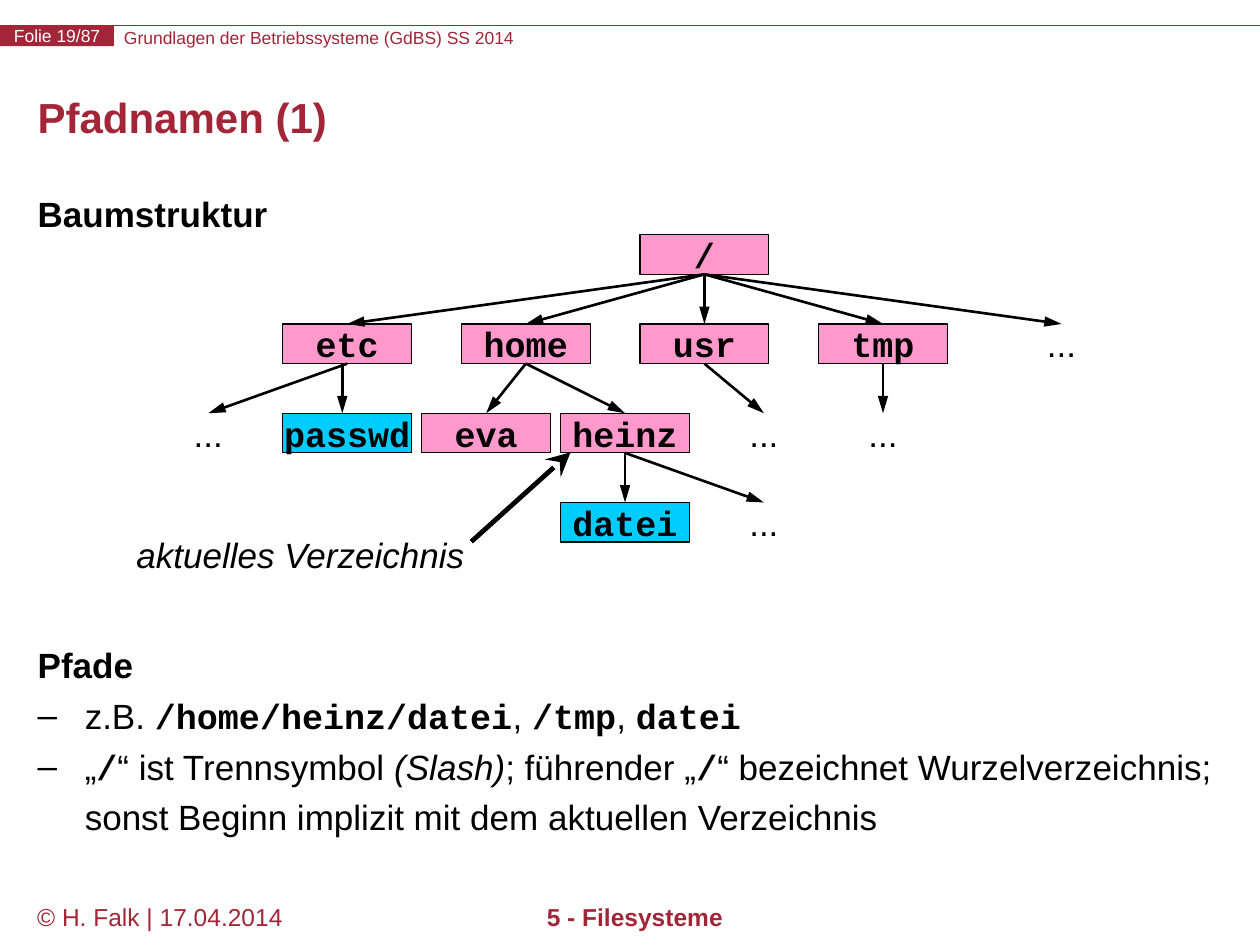
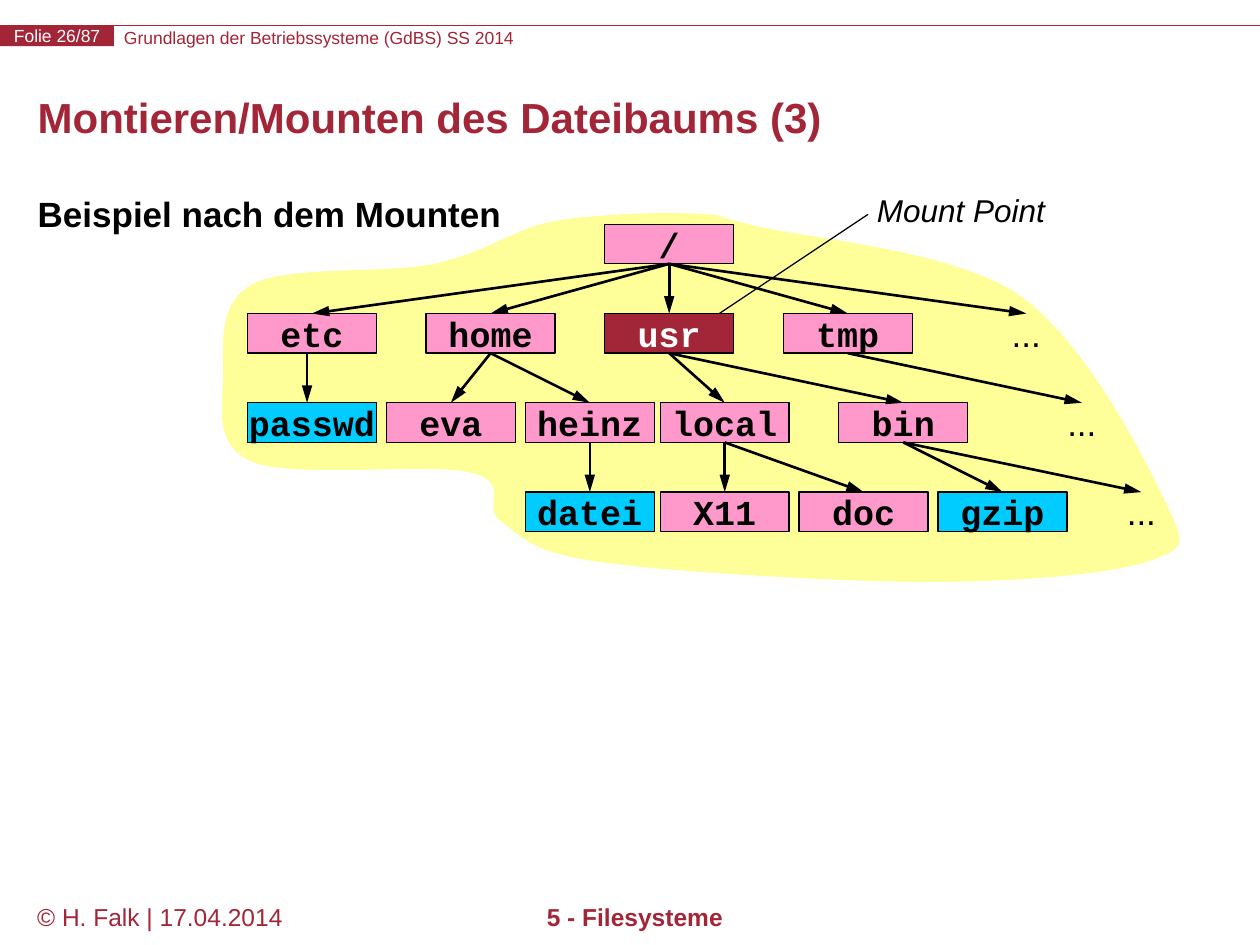
from lxml import etree
from pptx import Presentation
from pptx import util as u
from pptx.dml.color import RGBColor
from pptx.enum import shapes, text
from pptx.oxml.ns import qn

COLORS = {"brand": "A32638", "directory": "FF99CC", "file": "00CCFF",
          "mounted": "A32638", "area": "FFFF99", "black": "000000", "white": "FFFFFF"}
SANS, MONO = "Arial", "Courier New"
BOX_WIDTH, BOX_HEIGHT, LEVEL_STEP = 2.6, 0.8, 1.8
PASSWD_EDGE_SHIFT = 0.1

COMMON_NODES = [
    ("/", 0, 0, "directory", None),
    ("etc", 1, -7.2, "directory", "/"),
    ("home", 1, -3.6, "directory", "/"),
    ("usr", 1, 0, "directory", "/"),
    ("tmp", 1, 3.6, "directory", "/"),
    ("...", 1, 7.2, None, "/"),
    ("passwd", 2, -7.2, "file", "etc"),
    ("eva", 2, -4.4, "directory", "home"),
    ("heinz", 2, -1.6, "directory", "home"),
    ("datei", 3, -1.6, "file", "heinz"),
]
PATH_NODES = [
    ("...", 2, -10, None, "etc"),
    ("...", 2, 1.2, None, "usr"),
    ("...", 2, 3.6, None, "tmp"),
    ("...", 3, 1.2, None, "heinz"),
]
MOUNT_NODES = [
    ("...", 2, 8.32, None, "tmp"),
    ("local", 2, 1.12, "directory", "usr"),
    ("bin", 2, 4.72, "directory", "usr"),
    ("X11", 3, 1.12, "directory", "local"),
    ("doc", 3, 3.92, "directory", "local"),
    ("gzip", 3, 6.72, "file", "bin"),
    ("...", 3, 9.52, None, "bin"),
]
AREA_START = (12.5, 4.32)
AREA_CURVES = [
    ((13.06, 4.29), (13.87, 4.29), (14.3, 4.32)),
    ((14.73, 4.37), (14.07, 4.27), (15.09, 4.52)),
    ((16.13, 4.8), (19.1, 5), (20.5, 5.92)),
    ((21.89, 6.86), (23.06, 9.22), (23.5, 10.13)),
    ((23.93, 11.02), (23.9, 11.05), (23.11, 11.33)),
    ((22.3, 11.58), (20.55, 11.73), (18.69, 11.73)),
    ((16.87, 11.73), (13.54, 11.53), (12.09, 11.33)),
    ((10.67, 11.13), (10.54, 10.82), (10.11, 10.52)),
    ((9.68, 10.24), (10.34, 9.73), (9.5, 9.53)),
    ((8.66, 9.32), (5.94, 9.65), (5.11, 9.32)),
    ((4.27, 8.99), (4.5, 8.13), (4.5, 7.52)),
    ((4.5, 6.93), (4.39, 6.1), (5.11, 5.72)),
    ((5.79, 5.36), (7.75, 5.51), (8.71, 5.33)),
    ((9.68, 5.13), (10.26, 4.7), (10.9, 4.52)),
    ((11.53, 4.37), (11.94, 4.37), AREA_START),
]
PATH_BULLETS = [
    [("z.B. ", ""), ("/home/heinz/datei", "mono"), (", ", ""), ("/tmp", "mono"),
     (", ", ""), ("datei", "mono")],
    [("„", ""), ("/", "mono"), ("“ ist Trennsymbol ", ""), ("(Slash)", "italic"),
     ("; führender „", ""), ("/", "mono"),
     ("“ bezeichnet Wurzelverzeichnis; sonst Beginn implizit mit dem aktuellen Verzeichnis", "")],
]
PAGES = [
    {"number": 19, "title": "Pfadnamen (1)", "heading": "Baumstruktur",
     "root": (12.9, 4.73), "nodes": COMMON_NODES + PATH_NODES, "mounted": None,
     "note": ("aktuelles Verzeichnis", 20, 2.5, 10.64, 7.14),
     "pointer": (9.5, 10.92, 11.5, 9.12, 2.75, "stealth", "lg")},
    {"number": 26, "title": "Montieren/Mounten des Dateibaums (3)",
     "heading": "Beispiel nach dem Mounten",
     "root": (12.19, 4.52), "nodes": COMMON_NODES + MOUNT_NODES, "mounted": "usr",
     "note": ("Mount Point", 18, 17.43, 3.73, 3.9),
     "pointer": (17.5, 4.32, 14.5, 6.32, 0.75, None, None)},
]


def add_text(slide, content, left, top, width, height, size, color="black", fill=None,
             font=SANS, bold=False, italic=False, align="LEFT", anchor="TOP",
             wrap=True, margins=True):
    frame = tuple(u.Cm(value) for value in (left, top, width, height))
    if fill:
        shape = slide.shapes.add_shape(shapes.MSO_SHAPE.RECTANGLE, *frame)
        shape.shadow.inherit = False
        shape.fill.solid()
        shape.fill.fore_color.rgb = RGBColor.from_string(COLORS[fill])
        shape.line.fill.background()
    else:
        shape = slide.shapes.add_textbox(*frame)
    text_frame = shape.text_frame
    text_frame.word_wrap = wrap
    text_frame.vertical_anchor = getattr(text.MSO_ANCHOR, anchor)
    if not margins:
        text_frame.margin_left = text_frame.margin_right = 0
        text_frame.margin_top = text_frame.margin_bottom = 0
    text_frame.text = content
    paragraph = text_frame.paragraphs[0]
    paragraph.alignment = getattr(text.PP_ALIGN, align)
    run_font = paragraph.runs[0].font
    run_font.name, run_font.size = font, u.Pt(size)
    run_font.bold, run_font.italic = bold, italic
    run_font.color.rgb = RGBColor.from_string(COLORS[color])
    return shape


def add_line(slide, x1, y1, x2, y2, width, color="black", arrow=None, arrow_width="med"):
    line = slide.shapes.add_connector(shapes.MSO_CONNECTOR.STRAIGHT,
                                      u.Cm(x1), u.Cm(y1), u.Cm(x2), u.Cm(y2))
    line.line.width = u.Pt(width)
    line.line.color.rgb = RGBColor.from_string(COLORS[color])
    properties = line._element.spPr
    if arrow:
        etree.SubElement(properties.find(qn("a:ln")), qn("a:tailEnd"),
                         type=arrow, w=arrow_width, len="lg")
    etree.SubElement(properties, qn("a:effectLst"))
    return line


presentation = Presentation()
presentation.slide_width, presentation.slide_height = u.Cm(25.4), u.Cm(19.05)

for page in PAGES:
    slide = presentation.slides.add_slide(presentation.slide_layouts[6])
    add_line(slide, 0, 0.51, 25.4, 0.51, 0.75, "brand")
    add_text(slide, "Grundlagen der Betriebssysteme (GdBS) SS 2014",
             2.5, 0.55, 16.76, 0.43, 10, "brand", margins=False)
    add_text(slide, f"Folie {page['number']}/87", 0, 0.51, 2.3, 0.42, 10, "white",
             fill="brand", align="CENTER", anchor="MIDDLE", wrap=False, margins=False)
    add_text(slide, "© H. Falk | 17.04.2014", 0.5, 18.06, 5.6, 0.99, 14, "brand")
    add_text(slide, "5 - Filesysteme", 5.1, 18.06, 15.4, 0.99, 14, "brand",
             bold=True, align="CENTER")

    if page["mounted"]:
        builder = slide.shapes.build_freeform(*(u.Cm(value) for value in AREA_START))
        builder.add_line_segments([(u.Cm(x), u.Cm(y)) for curve in AREA_CURVES
                                   for x, y in curve], close=True)
        area = builder.convert_to_shape()
        segments = list(area._element.iter(qn("a:lnTo")))
        for index in range(0, 3 * len(AREA_CURVES), 3):
            curve = etree.Element(qn("a:cubicBezTo"))
            segments[index].addprevious(curve)
            for segment in segments[index:index + 3]:
                curve.append(segment[0])
                segment.getparent().remove(segment)
        area.shadow.inherit = False
        area.fill.solid()
        area.fill.fore_color.rgb = RGBColor.from_string(COLORS["area"])
        area.line.fill.background()

    body = add_text(slide, page["heading"], 0.51, 3.86, 24.4, 13.87, 20, bold=True)
    body.text_frame.paragraphs[0].line_spacing = 0.9
    title = add_text(slide, page["title"], 0.51, 1.52, 24.4, 1.83, 24, "brand",
                     bold=True, anchor="MIDDLE")
    title.text_frame.paragraphs[0].line_spacing = u.Pt(24)

    if not page["mounted"]:
        paragraph = body.text_frame.add_paragraph()
        paragraph.text = "Pfade"
        paragraph.line_spacing, paragraph.space_before = 0.9, u.Pt(236)
        run_font = paragraph.runs[0].font
        run_font.name, run_font.size, run_font.bold = SANS, u.Pt(20), True
        run_font.color.rgb = RGBColor.from_string(COLORS["black"])
        for parts in PATH_BULLETS:
            paragraph = body.text_frame.add_paragraph()
            paragraph.line_spacing = 1.2
            properties = paragraph._p.get_or_add_pPr()
            properties.set("marL", str(u.Cm(0.95)))
            properties.set("indent", str(u.Cm(-0.95)))
            etree.SubElement(properties, qn("a:buFont"), typeface=SANS)
            etree.SubElement(properties, qn("a:buChar"), char="–")
            for content, style in parts:
                run = paragraph.add_run()
                run.text = content
                run.font.name = MONO if style == "mono" else SANS
                run.font.size = u.Pt(20)
                run.font.bold = style == "mono"
                run.font.italic = style == "italic"
                run.font.color.rgb = RGBColor.from_string(COLORS["black"])

    root_left, root_top = page["root"]
    boxes = {}
    for label, level, offset, kind, parent in page["nodes"]:
        is_mounted = label == page["mounted"]
        left, top = root_left + offset, root_top + level * LEVEL_STEP
        box = add_text(slide, label, left, top, BOX_WIDTH, BOX_HEIGHT, 20,
                       "white" if is_mounted else "black",
                       fill="mounted" if is_mounted else kind, font=MONO if kind else SANS,
                       bold=bool(kind), align="CENTER", anchor="MIDDLE", wrap=False)
        if kind:
            box.line.color.rgb = RGBColor.from_string(COLORS["black"])
            box.line.width = u.Pt(0.75)
        boxes[label] = box
        if parent:
            edge_x = left + BOX_WIDTH / 2 - PASSWD_EDGE_SHIFT
            edge = add_line(slide, edge_x, top - LEVEL_STEP + BOX_HEIGHT, edge_x, top,
                            1.5, arrow="triangle")
            if label != "passwd":
                edge.begin_connect(boxes[parent], 2)
                edge.end_connect(box, 0)

    note, size, left, top, width = page["note"]
    add_text(slide, note, left, top, width, 1.05, size, italic=True, wrap=False)
    x1, y1, x2, y2, weight, arrow, arrow_width = page["pointer"]
    add_line(slide, x1, y1, x2, y2, weight, arrow=arrow, arrow_width=arrow_width)

presentation.save("out.pptx")
